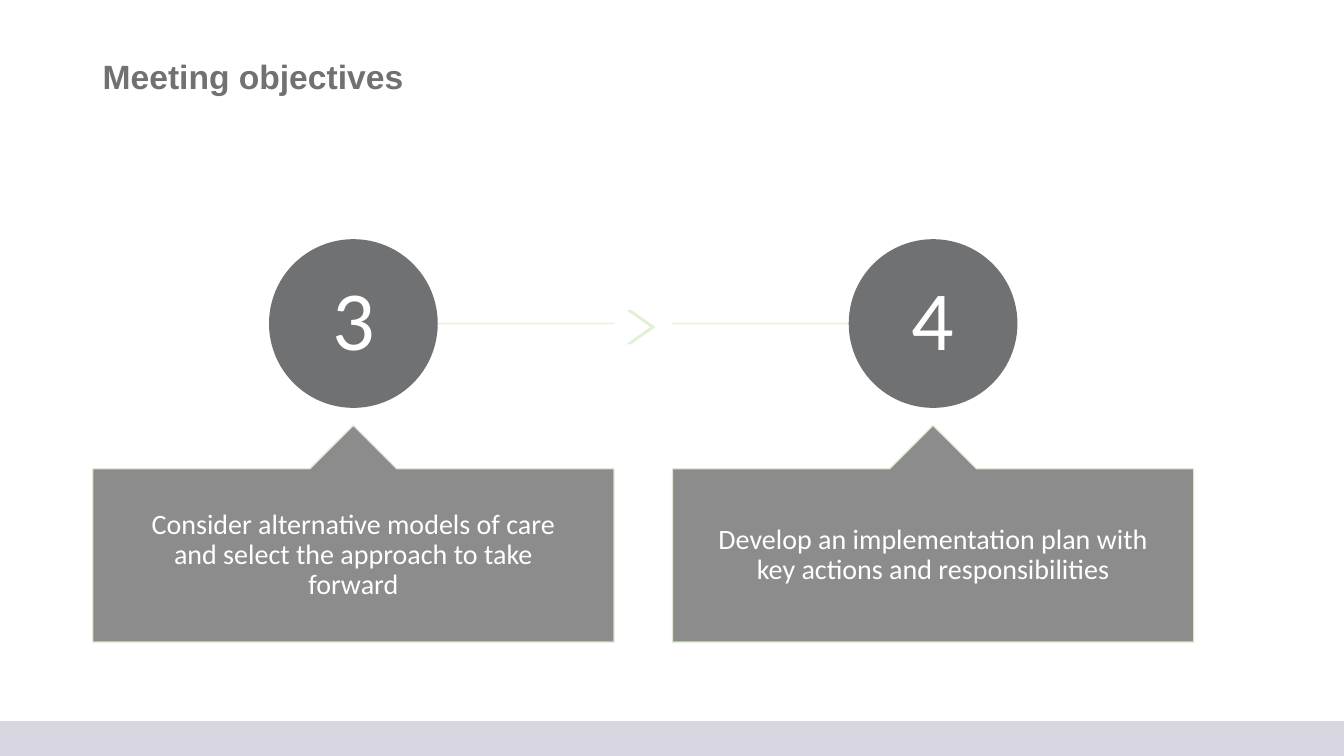
"""Build the meeting objectives slide with two numbered callouts."""
from lxml.etree import SubElement
from pptx import Presentation
from pptx.dml.color import RGBColor
from pptx.enum.shapes import MSO_CONNECTOR as CONN, MSO_SHAPE as SHAPE
from pptx.enum.text import MSO_ANCHOR as ANCHOR, PP_ALIGN as ALIGN
from pptx.oxml.ns import qn
from pptx.util import Inches, Pt

WHITE = RGBColor(0xFF, 0xFF, 0xFF)
SLATE = RGBColor(0x70, 0x71, 0x73)
GREY = RGBColor(0x80, 0x80, 0x80)
GREEN = RGBColor(0xE0, 0xF0, 0xD3)
LILAC = RGBColor(0xD8, 0xD7, 0xE1)

WIDTH, HEIGHT = 13.33, 7.5
LEFT, COL, PITCH = 0.92, 5.17, 5.75
CIRCLE_TOP, CIRCLE = 2.38, 1.66
CALLOUT_TOP, CALLOUT_H = 4.22, 2.15
LINE_Y = CIRCLE_TOP + CIRCLE / 2
FOOTER = 0.34
OBJECTIVES = [
    ("3", "Consider alternative models of care and select the approach to take forward"),
    ("4", "Develop an implementation plan with key actions and responsibilities"),
]


def soften(sp):
    """Make the shape's colours 90 percent opaque."""
    for color in sp.element.spPr.iter(qn("a:srgbClr")):
        SubElement(color, qn("a:alpha"), val="90000")


def add_box(s, kind, box, fill, line, adj=()):
    """Add a filled preset shape with a one-point outline."""
    sp = s.shapes.add_shape(kind, *map(Inches, box))
    sp.shadow.inherit = False
    sp.fill.solid()
    sp.fill.fore_color.rgb = fill
    sp.line.color.rgb = line
    sp.line.width = Pt(1)
    for i, value in enumerate(adj):
        sp.adjustments[i] = value
    return sp


def add_text(sp, text, size, color, font, insets, align=ALIGN.CENTER, bold=False):
    """Set one vertically centred paragraph in a shape."""
    tf = sp.text_frame
    tf.word_wrap = True
    tf.vertical_anchor = ANCHOR.MIDDLE
    tf.margin_left = tf.margin_right = Inches(insets[0])
    tf.margin_top = tf.margin_bottom = Inches(insets[1])
    p = tf.paragraphs[0]
    p.alignment = align
    p.line_spacing = 0.9
    r = p.add_run()
    r.text = text
    r.font.size = Pt(size)
    r.font.name = font
    r.font.bold = bold
    r.font.color.rgb = color


def add_line(s, start, end):
    """Add a pale horizontal line at the circles' mid height."""
    y = Inches(LINE_Y)
    cx = s.shapes.add_connector(CONN.STRAIGHT, Inches(start), y, Inches(end), y)
    cx.line.color.rgb = GREEN
    cx.line.width = Pt(1)
    soften(cx)
    SubElement(cx.element.spPr, qn("a:effectLst"))


def add_objective(s, col, number, text):
    """Add a numbered circle above its callout."""
    left = LEFT + col * PITCH
    middle = left + COL / 2
    circle = add_box(s, SHAPE.OVAL, (middle - CIRCLE / 2, CIRCLE_TOP, CIRCLE, CIRCLE),
                     SLATE, SLATE)
    add_text(circle, number, 60, WHITE, "Calibri", (0.07, 0.07))
    callout = add_box(s, SHAPE.UP_ARROW_CALLOUT, (left, CALLOUT_TOP, COL, CALLOUT_H),
                      GREY, GREEN, (0.5, 0.2, 0.2, 1))
    soften(callout)
    add_text(callout, text, 20, WHITE, "Calibri", (0.41, 0.18))


def main():
    """Build and save the slide."""
    prs = Presentation()
    prs.slide_width, prs.slide_height = Inches(WIDTH), Inches(HEIGHT)
    s = prs.slides.add_slide(prs.slide_layouts[6])
    add_box(s, SHAPE.RECTANGLE, (0, HEIGHT - FOOTER, WIDTH, FOOTER), LILAC, LILAC)
    title = s.shapes.add_textbox(*map(Inches, (LEFT, 0.4, 11.5, 0.75)))
    add_text(title, "Meeting objectives", 24, SLATE, "Arial", (0.1, 0.05),
             ALIGN.LEFT, True)
    add_line(s, LEFT + COL / 2, LEFT + COL)
    add_line(s, LEFT + PITCH, LEFT + PITCH + COL / 2)
    soften(add_box(s, SHAPE.CHEVRON, (6.23, 3.08, 0.26, 0.33), GREEN, GREEN, (0.9,)))
    for col, (number, text) in enumerate(OBJECTIVES):
        add_objective(s, col, number, text)
    prs.save("out.pptx")


if __name__ == "__main__":
    main()
